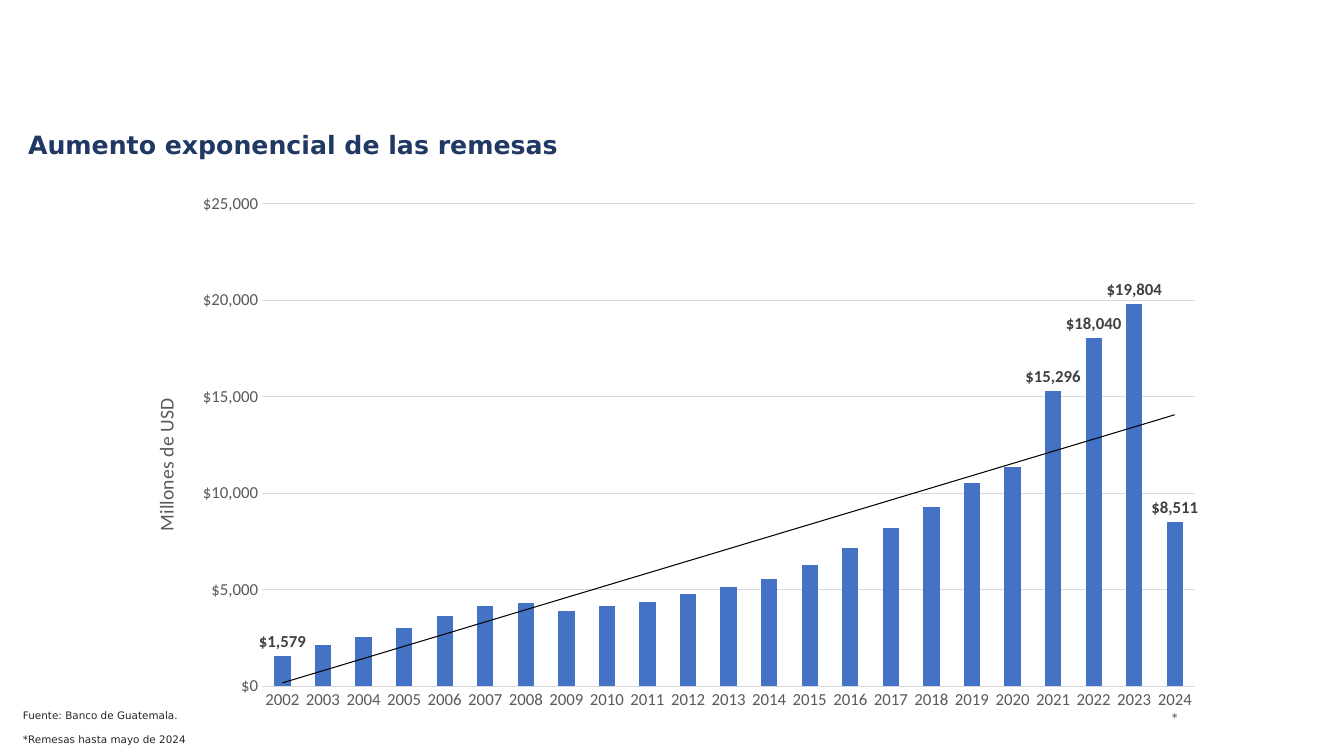
import pptx
import pptx.chart.data
import pptx.dml.color
import pptx.enum.chart
import pptx.enum.text
import pptx.oxml
import pptx.oxml.ns
import pptx.util
from pptx.util import Inches

RGBColor = pptx.dml.color.RGBColor
NAVY = RGBColor(0x20, 0x38, 0x64)
BLUE = RGBColor(0x44, 0x72, 0xC4)
GRID = RGBColor(0xD9, 0xD9, 0xD9)
AXIS_TEXT = RGBColor(0x59, 0x59, 0x59)
LABEL_TEXT = RGBColor(0x40, 0x40, 0x40)
SOURCE_TEXT = RGBColor(0x26, 0x26, 0x26)
BLACK = RGBColor(0, 0, 0)
USD_FORMAT = "[$$-409]#,##0"


def add_text(box, lines, size, color, bold, spacing, gap):
    frame = box.text_frame
    frame.word_wrap = True
    for index, line in enumerate(lines):
        paragraph = frame.add_paragraph() if index else frame.paragraphs[0]
        paragraph.line_spacing = spacing
        if index:
            paragraph.space_before = pptx.util.Pt(gap)
        run = paragraph.add_run()
        run.text = line
        run.font.name = "DejaVu Sans"
        run.font.size = pptx.util.Pt(size)
        run.font.bold = bold
        run.font.color.rgb = color
    return frame


def chart_layout(x, y, size=None):
    inner = '<c:layoutTarget val="inner"/>' if size else ""
    extent = f'<c:w val="{size[0]}"/><c:h val="{size[1]}"/>' if size else ""
    return pptx.oxml.parse_xml(
        f'<c:layout {pptx.oxml.ns.nsdecls("c")}><c:manualLayout>{inner}'
        '<c:xMode val="edge"/><c:yMode val="edge"/>'
        f'<c:x val="{x}"/><c:y val="{y}"/>{extent}</c:manualLayout></c:layout>')


presentation = pptx.Presentation()
presentation.slide_width = Inches(13.33)
presentation.slide_height = Inches(7.5)
slide = presentation.slides.add_slide(presentation.slide_layouts[6])

# Heading
heading = slide.shapes.add_textbox(Inches(0.18), Inches(1.18), Inches(13.29), Inches(0.54))
heading_frame = add_text(heading, ["Aumento exponencial de las remesas"], 18, NAVY, True, 0.9, 0)
heading_frame.vertical_anchor = pptx.enum.text.MSO_ANCHOR.MIDDLE

# Remittances by year
remittances = [1579, 2107, 2551, 2993, 3610, 4128, 4315, 3912, 4127, 4378, 4783, 5105,
               5544, 6285, 7160, 8192, 9288, 10508, 11340, 15296, 18040, 19804, 8511]
chart_data = pptx.chart.data.CategoryChartData(number_format=USD_FORMAT)
chart_data.categories = [str(year) for year in range(2002, 2024)] + ["2024*"]
chart_data.add_series("Remesas", remittances)
chart = slide.shapes.add_chart(
    pptx.enum.chart.XL_CHART_TYPE.COLUMN_CLUSTERED,
    Inches(1.26), Inches(1.81), Inches(10.81), Inches(5.54), chart_data).chart
chart.has_title = False
chart.has_legend = False
chart.font.name = "Calibri"
chart.font.size = pptx.util.Pt(10)
chart.font.color.rgb = BLACK

plot = chart.plots[0]
plot.gap_width = 150
plot.vary_by_categories = False
bars = plot.series[0]
bars.format.fill.solid()
bars.format.fill.fore_color.rgb = BLUE

# Labels on the first year and the last four
bars.data_labels.show_value = False
for year_index in (0, 19, 20, 21, 22):
    label = bars.points[year_index].data_label
    label.font.name = "Calibri"
    label.font.size = pptx.util.Pt(12)
    label.font.bold = True
    label.font.color.rgb = LABEL_TEXT
    label.position = pptx.enum.chart.XL_LABEL_POSITION.OUTSIDE_END

# Linear trend
trend = pptx.oxml.parse_xml(
    f'<c:trendline {pptx.oxml.ns.nsdecls("c", "a")}><c:spPr><a:ln w="9525"><a:solidFill>'
    f'<a:srgbClr val="{BLACK}"/></a:solidFill></a:ln></c:spPr>'
    '<c:trendlineType val="linear"/><c:dispRSqr val="0"/><c:dispEq val="0"/></c:trendline>')
bars._element.find(pptx.oxml.ns.qn("c:cat")).addprevious(trend)

# Axes
years, dollars = chart.category_axis, chart.value_axis
for axis in (years, dollars):
    axis.major_tick_mark = pptx.enum.chart.XL_TICK_MARK.NONE
    axis.minor_tick_mark = pptx.enum.chart.XL_TICK_MARK.NONE
    axis.tick_labels.font.name = "Calibri"
    axis.tick_labels.font.size = pptx.util.Pt(12)
    axis.tick_labels.font.color.rgb = AXIS_TEXT
dollars.minimum_scale, dollars.maximum_scale, dollars.major_unit = 0, 25000, 5000
dollars.tick_labels.number_format = USD_FORMAT
dollars.tick_labels.number_format_is_linked = False
dollars.format.line.fill.background()
dollars.has_major_gridlines = True
for line in (years.format.line, dollars.major_gridlines.format.line):
    line.color.rgb = GRID
    line.width = pptx.util.Pt(0.75)

# Value axis title
unit_title = dollars.axis_title
unit_run = unit_title.text_frame.paragraphs[0].add_run()
unit_run.text = "Millones de USD"
unit_run.font.name = "Calibri"
unit_run.font.size = pptx.util.Pt(14)
unit_run.font.bold = False
unit_run.font.color.rgb = AXIS_TEXT
title_xml = unit_title._element
title_body = title_xml.find(".//" + pptx.oxml.ns.qn("a:bodyPr"))
title_body.set("rot", "-5400000")
title_body.set("vert", "horz")

# Fixed places for the plot and the axis title
plot_xml = chart._chartSpace.find(".//" + pptx.oxml.ns.qn("c:plotArea"))
for parent in (plot_xml, title_xml):
    for layout in parent.findall(pptx.oxml.ns.qn("c:layout")):
        parent.remove(layout)
plot_xml.insert(0, chart_layout(0.124, 0.038, (0.856, 0.864)))
title_xml.find(pptx.oxml.ns.qn("c:tx")).addnext(chart_layout(0.02, 0.38))

# Source and note
source = slide.shapes.add_textbox(Inches(0.13), Inches(7.01), Inches(6.53), Inches(0.44))
add_text(source, ["Fuente: Banco de Guatemala.", "*Remesas hasta mayo de 2024"],
         7.4, SOURCE_TEXT, False, 0.8, 10)

presentation.save("out.pptx")
